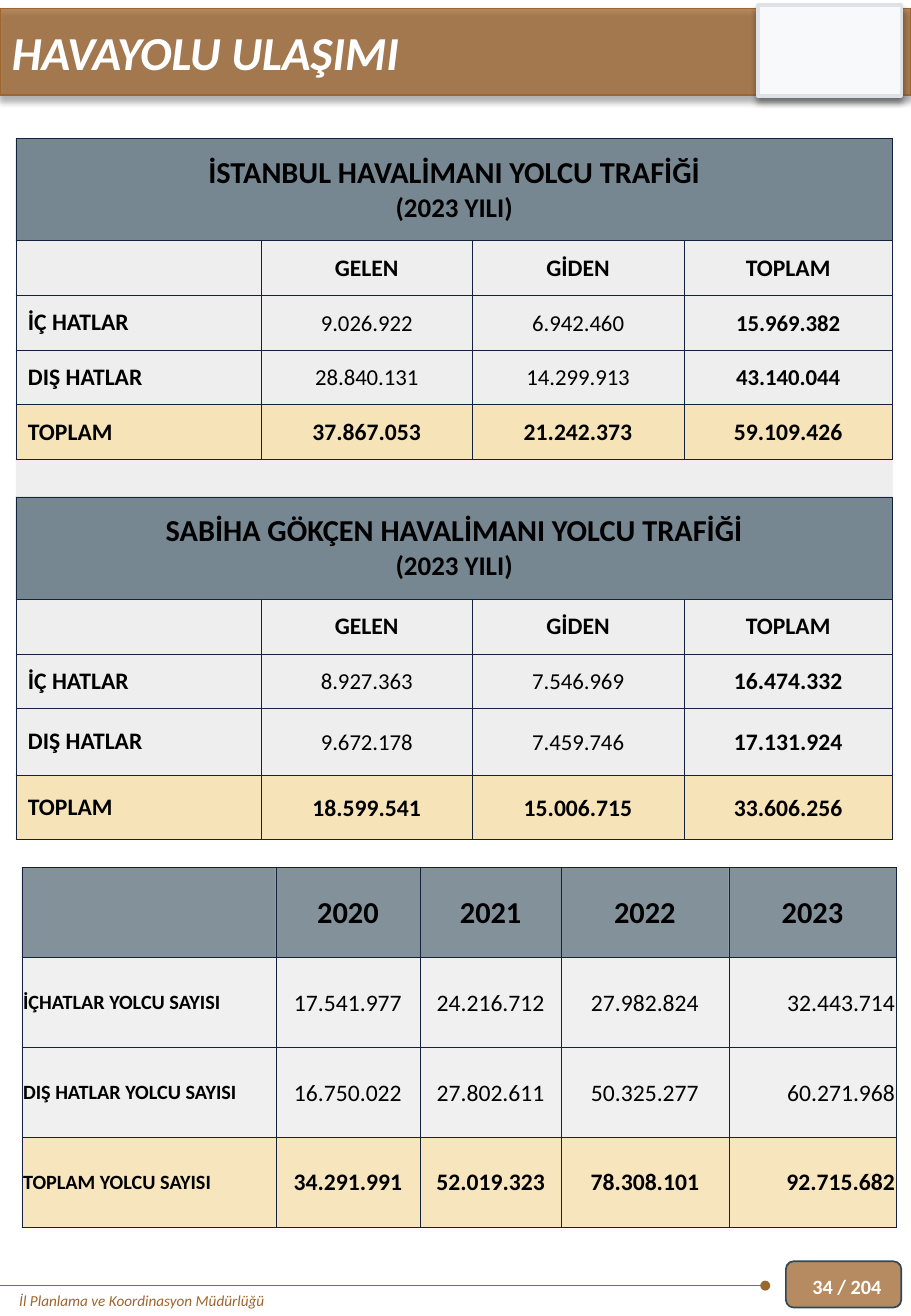
import lxml.etree
import pptx
import pptx.dml.color
import pptx.enum.shapes
import pptx.enum.text
import pptx.oxml.ns
import pptx.util

Inches, Pt = pptx.util.Inches, pptx.util.Pt
ALIGN = pptx.enum.text.PP_ALIGN
SHAPE = pptx.enum.shapes.MSO_SHAPE
MIDDLE = pptx.enum.text.MSO_ANCHOR.MIDDLE
FONT = "Calibri"
COLORS = {"brown": "9E652E", "slate": "2F4858", "gray": "E7E6E6", "gold": "F2D492",
          "navy": "14213D", "panel": "F8F9FA", "edge": "DEE2E6", "black": "000000", "white": "FFFFFF"}
AIRPORTS = [
    ("İSTANBUL HAVALİMANI YOLCU TRAFİĞİ", 13.5, [
        ["İÇ HATLAR", "9.026.922", "6.942.460", "15.969.382"],
        ["DIŞ HATLAR", "28.840.131", "14.299.913", "43.140.044"],
        ["TOPLAM", "37.867.053", "21.242.373", "59.109.426"]]),
    ("SABİHA GÖKÇEN HAVALİMANI YOLCU TRAFİĞİ", 14, [
        ["İÇ HATLAR", "8.927.363", "7.546.969", "16.474.332"],
        ["DIŞ HATLAR", "9.672.178", "7.459.746", "17.131.924"],
        ["TOPLAM", "18.599.541", "15.006.715", "33.606.256"]]),
]
YEARS = [
    ["", "2020", "2021", "2022", "2023"],
    ["İÇHATLAR YOLCU SAYISI", "17.541.977", "24.216.712", "27.982.824", "32.443.714"],
    ["DIŞ HATLAR YOLCU SAYISI", "16.750.022", "27.802.611", "50.325.277", "60.271.968"],
    ["TOPLAM YOLCU SAYISI", "34.291.991", "52.019.323", "78.308.101", "92.715.682"],
]


def add_xml(parent, tag, **attributes):
    """Append a drawing element to a parent and return it."""
    return lxml.etree.SubElement(parent, pptx.oxml.ns.qn(tag), attributes)


def paint(fill, holder, color, opacity=100):
    """Give a fill a solid colour, with opacity in percent."""
    fill.solid()
    fill.fore_color.rgb = pptx.dml.color.RGBColor.from_string(COLORS[color])
    if opacity < 100:
        tone = holder.find(pptx.oxml.ns.qn("a:solidFill"))[0]
        add_xml(tone, "a:alpha", val=str(opacity * 1000))


def write(frame, lines, color="black", align=ALIGN.LEFT, bold=True, italic=False):
    """Write (text, size) lines as paragraphs of a text frame."""
    frame.word_wrap = True
    for index, (text, size) in enumerate(lines):
        para = frame.add_paragraph() if index else frame.paragraphs[0]
        para.text = text
        para.alignment = align
        font = para.font
        font.name, font.size, font.bold, font.italic = FONT, Pt(size), bold, italic
        font.color.rgb = pptx.dml.color.RGBColor.from_string(COLORS[color])


def add_label(page, box, text, size, color, anchor=None, italic=False, bold=True):
    """Place one line of text in a box."""
    frame = page.shapes.add_textbox(*map(Inches, box)).text_frame
    frame.vertical_anchor = anchor
    write(frame, [(text, size)], color, bold=bold, italic=italic)


def add_panel(page, kind, box, color, edge, weight, opacity=100, shadow=False):
    """Place a filled and outlined shape, with a soft drop shadow on request."""
    panel = page.shapes.add_shape(kind, *map(Inches, box))
    panel.shadow.inherit = False
    properties = panel.element.spPr
    paint(panel.fill, properties, color, opacity)
    panel.line.color.rgb = pptx.dml.color.RGBColor.from_string(COLORS[edge])
    panel.line.width = Pt(weight)
    if shadow:
        effects = properties.find(pptx.oxml.ns.qn("a:effectLst"))
        drop = add_xml(effects, "a:outerShdw", blurRad=str(Pt(4)), dist=str(Pt(3)),
                       dir="5400000", algn="t", rotWithShape="0")
        tone = add_xml(drop, "a:srgbClr", val=COLORS["black"])
        add_xml(tone, "a:alpha", val="40000")


def style_cell(cell, color, opacity, lines=(("", 8),), align=ALIGN.CENTER, bold=True,
               tight=False, sides="LRTB"):
    """Set the borders, fill, margins and text of a table cell."""
    properties = cell._tc.get_or_add_tcPr()
    for side in "LRTB":
        border = add_xml(properties, "a:ln" + side, w=str(Pt(0.25)))
        if side in sides:
            add_xml(add_xml(border, "a:solidFill"), "a:srgbClr", val=COLORS["navy"])
        else:
            add_xml(border, "a:noFill")
    paint(cell.fill, properties, color, opacity)
    cell.vertical_anchor = MIDDLE
    if tight:
        cell.margin_left = cell.margin_right = cell.margin_top = Inches(0.01)
        cell.margin_bottom = 0
    write(cell.text_frame, lines, align=align, bold=bold)


def add_grid(page, left, top, widths, heights):
    """Place an unstyled table with the given column widths and row heights."""
    table = page.shapes.add_table(len(heights), len(widths), Inches(left), Inches(top),
                                  Inches(sum(widths)), Inches(sum(heights))).table
    table.first_row = table.horz_banding = False
    for column, width in zip(table.columns, widths):
        column.width = Inches(width)
    for row, height in zip(table.rows, heights):
        row.height = Inches(height)
    return table


def style_band(table, row, color, lines=(("", 8),), **options):
    """Merge a whole row and style it as one band."""
    cells = list(table.rows[row].cells)
    cells[0].merge(cells[-1])
    style_cell(cells[0], color, 65, lines, **options)
    for cell in cells[1:]:
        style_cell(cell, color, 65, **options)


def add_airport_table(page, left, top):
    """Build the table of both airports, parted by an empty band."""
    table = add_grid(page, left, top, [2.02, 1.74, 1.74, 1.72],
                     [0.84, 0.45, 0.45, 0.45, 0.45, 0.31, 0.84, 0.45, 0.45, 0.55, 0.53])
    style_band(table, 5, "gray", tight=True, sides="TB")
    for start, (title, total_size, records) in zip((0, 6), AIRPORTS):
        style_band(table, start, "slate", [(title, 18), ("(2023 YILI)", 16)])
        for index, text in enumerate(["", "GELEN", "GİDEN", "TOPLAM"]):
            style_cell(table.cell(start + 1, index), "gray", 65, [(text, 14)])
        for row, record in enumerate(records):
            total = row == len(records) - 1
            color = "gold" if total else "gray"
            for index, text in enumerate(record):
                size = 14 if total or not index else total_size if index == 3 else 13.5
                style_cell(table.cell(start + 2 + row, index), color, 65, [(text, size)],
                           align=ALIGN.CENTER if index else ALIGN.LEFT,
                           bold=total or index in (0, 3), tight=index > 0)


def add_year_table(page, left, top):
    """Build the table of passengers by year."""
    table = add_grid(page, left, top, [2.09, 1.19, 1.16, 1.38, 1.38], [0.74] * 4)
    for row, record in enumerate(YEARS):
        color = ["slate", "gray", "gray", "gold"][row]
        for index, text in enumerate(record):
            size = 18 if row == 0 else 14 if index else 12
            align = ALIGN.CENTER
            if row and index in (0, 4):
                align = ALIGN.RIGHT if index else ALIGN.LEFT
            style_cell(table.cell(row, index), color, 60, [(text, size)], align=align,
                       bold=row in (0, 3) or index == 0, tight=True)


def add_header(page, left, top, width):
    """Build the title bar with its plain panel at the right."""
    add_panel(page, SHAPE.RECTANGLE, (left, top, width, 0.71), "brown", "brown", 1, 75, True)
    add_panel(page, SHAPE.RECTANGLE, (left + width - 1.26, top - 0.03, 1.18, 0.75),
              "panel", "edge", 2, shadow=True)
    add_label(page, (left, top + 0.07, width - 1.3, 0.57), "HAVAYOLU ULAŞIMI", 28, "white",
              italic=True)


def add_footer(page, left, top):
    """Build the footer rule, the office name and the page number."""
    rule = page.shapes.add_connector(pptx.enum.shapes.MSO_CONNECTOR.STRAIGHT, Inches(left + 6.3),
                                     Inches(top + 0.2), Inches(left), Inches(top + 0.2))
    rule.line.color.rgb = pptx.dml.color.RGBColor.from_string(COLORS["brown"])
    rule.line.width = Pt(0.5)
    add_xml(rule.line._get_or_add_ln(), "a:headEnd", type="oval")
    add_xml(rule.element.spPr, "a:effectLst")
    add_label(page, (left + 0.06, top + 0.2, 4.69, 0.25), "İl Planlama ve Koordinasyon Müdürlüğü",
              9, "brown", italic=True, bold=False)
    add_panel(page, SHAPE.ROUNDED_RECTANGLE, (left + 6.47, top, 0.95, 0.38),
              "brown", "slate", 1, 75)
    add_label(page, (left + 6.59, top, 0.91, 0.42), "34 / 204", 12, "white", MIDDLE)


def main():
    """Build the air transport page and save it."""
    deck = pptx.Presentation()
    deck.slide_width, deck.slide_height = Inches(7.5), Inches(10.83)
    page = deck.slides.add_slide(deck.slide_layouts[6])
    add_header(page, 0, 0.07, 7.5)
    add_airport_table(page, 0.13, 1.14)
    add_year_table(page, 0.18, 7.14)
    add_footer(page, 0, 10.38)
    deck.save("out.pptx")


if __name__ == "__main__":
    main()
